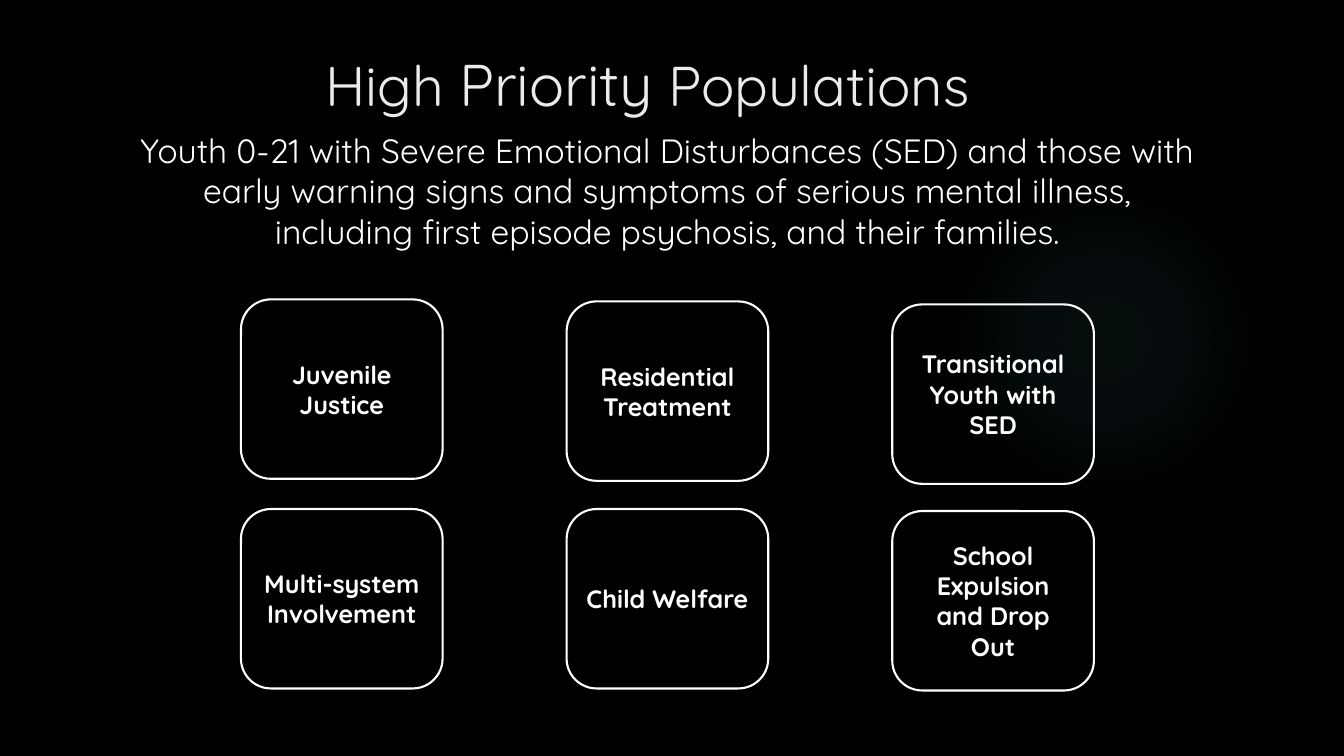
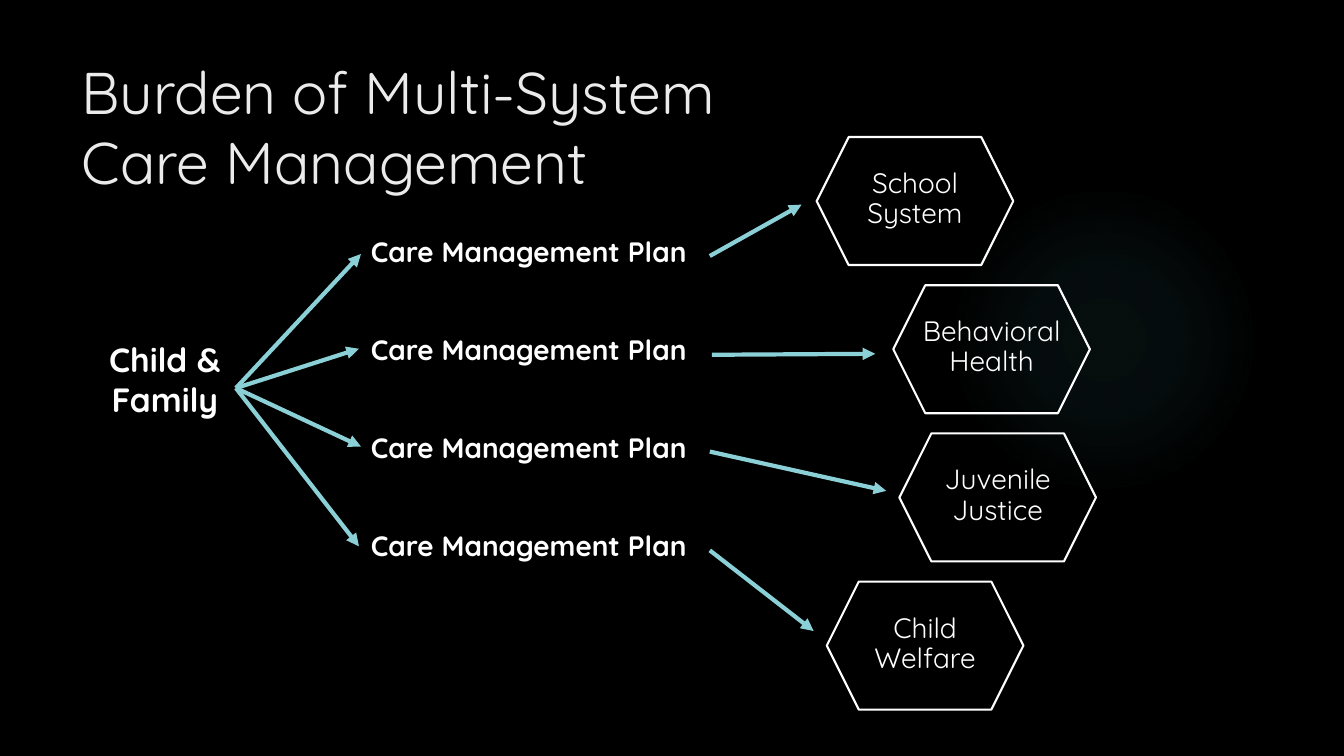
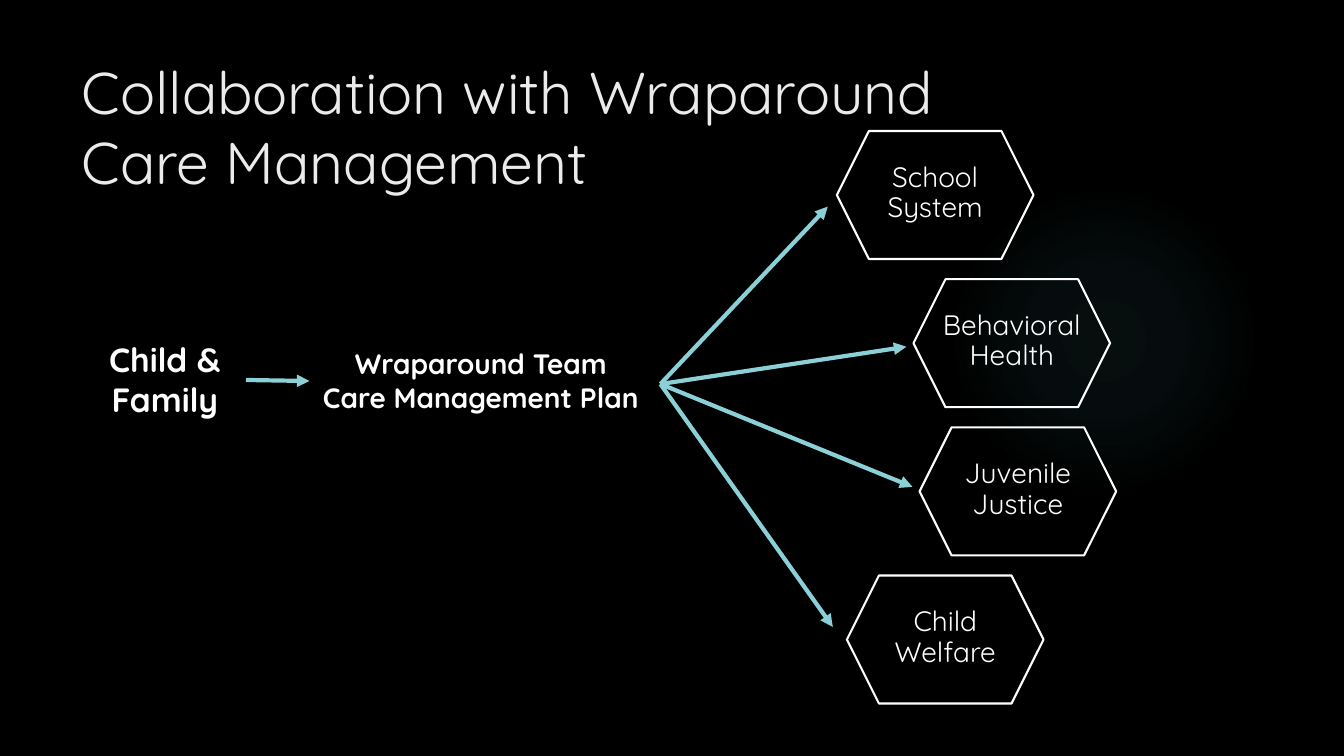
from pptx import Presentation
from pptx.dml.color import RGBColor
from pptx.enum.shapes import MSO_CONNECTOR as CONN, MSO_SHAPE as SHAPE
from pptx.enum.text import MSO_ANCHOR as ANCHOR, PP_ALIGN as ALIGN
from pptx.oxml import parse_xml
from pptx.oxml.ns import nsdecls
from pptx.util import Inches, Pt

FONT = "Quicksand"
BLACK, WHITE, TITLE = "000000", "FFFFFF", "EBEBEB"
ARROW, GLOW = "8AD0D6", "50B9C1"
HEX_W, HEX_H, HEX_STEP = 1.95, 1.27, 1.47
SYSTEMS = [
    ("School System", 0),
    ("Behavioral Health", 0.76),
    ("Juvenile Justice", 0.82),
    ("Child Welfare", 0.1),
]


def rgb(color):
    return RGBColor.from_string(color)


def inches(*values):
    return [Inches(v) for v in values]


def style(font, size, color=WHITE, bold=False):
    font.name, font.size, font.bold = FONT, Pt(size), bold
    font.color.rgb = rgb(color)


def write(tf, lines, size, bold=False, align=ALIGN.CENTER, spacing=None):
    tf.word_wrap = True
    for i, line in enumerate(lines):
        p = tf.add_paragraph() if i else tf.paragraphs[0]
        p.text, p.alignment, p.line_spacing = line, align, spacing
        style(p.font, size, bold=bold)


def text(s, box, *lines, size=20, bold=True, align=ALIGN.CENTER):
    tf = s.shapes.add_textbox(*inches(*box)).text_frame
    write(tf, lines, size, bold, align)


def outline(s, kind, box):
    sp = s.shapes.add_shape(kind, *inches(*box))
    sp.shadow.inherit = False
    sp.fill.background()
    sp.line.color.rgb = rgb(WHITE)
    sp.line.width = Pt(1.5)
    return sp


def arrow(s, start, end):
    c = s.shapes.add_connector(CONN.STRAIGHT, *inches(*start, *end))
    c.line.color.rgb = rgb(ARROW)
    c.line.width = Pt(3)
    spPr = c._element.spPr
    spPr.get_or_add_ln().append(parse_xml(f'<a:tailEnd {nsdecls("a")} type="triangle"/>'))
    spPr.append(parse_xml(f'<a:effectLst {nsdecls("a")}/>'))


def fan(s, start, ends):
    for end in ends:
        arrow(s, start, end)


def add_slide(prs, layout, box, runs, align=ALIGN.LEFT):
    s = prs.slides.add_slide(layout)
    sp = s.shapes.title
    sp.left, sp.top, sp.width, sp.height = inches(*box)
    tf = sp.text_frame
    tf.word_wrap, tf.vertical_anchor = True, ANCHOR.TOP
    p = tf.paragraphs[0]
    p.alignment = align
    for words, size in runs:
        for i, line in enumerate(words.split("\n")):
            if i:
                p.add_line_break()
            r = p.add_run()
            r.text = line
            style(r.font, size, TITLE)
    return s


def add_glow(s, layout):
    sp = s.shapes.add_shape(SHAPE.OVAL, *inches(9.41, 1.83, 3.08, 3.08))
    sp.shadow.inherit = False
    sp.line.fill.background()
    stops = "".join(
        f'<a:gs pos="{pos}000"><a:srgbClr val="{GLOW}"><a:alpha val="{alpha}000"/></a:srgbClr></a:gs>'
        for pos, alpha in [(0, 7), (36, 6), (69, 0)])
    el = sp._element
    el.spPr.find("{*}prstGeom").addnext(parse_xml(
        f'<a:gradFill {nsdecls("a")}><a:gsLst>{stops}</a:gsLst><a:path path="circle">'
        '<a:fillToRect l="50000" t="50000" r="50000" b="50000"/></a:path></a:gradFill>'))
    el.nvSpPr.cNvPr.set("id", "99")
    layout.shapes._spTree.insert(2, el)


def care_systems(s, left, top):
    for i, (name, dx) in enumerate(SYSTEMS):
        x, y = left + dx, top + i * HEX_STEP
        outline(s, SHAPE.HEXAGON, (x, y, HEX_W, HEX_H))
        tf = s.shapes.add_textbox(*inches(x + 0.23, y + 0.19, 1.49, 0.86)).text_frame
        tf.vertical_anchor = ANCHOR.MIDDLE
        tf.margin_left = tf.margin_right = tf.margin_top = tf.margin_bottom = Inches(0.03)
        write(tf, [name], 20, spacing=0.9)


def family(s):
    text(s, (0.93, 3.31, 1.41, 0.91), "Child & Family", size=24)


def populations(s, left, columns):
    for i, column in enumerate(columns):
        for name, top in column:
            sp = outline(s, SHAPE.ROUNDED_RECTANGLE, (left + i * 3.23, top, 2, 1.78))
            sp.text_frame.vertical_anchor = ANCHOR.MIDDLE
            write(sp.text_frame, [name], 18, bold=True)


def priority_slide(prs, layout):
    s = add_slide(prs, layout, (2.92, 0.42, 7, 0.75),
                  [("High ", 40), ("Priority", 42), (" Populations", 40)], ALIGN.CENTER)
    add_glow(s, layout)
    text(s, (1.29, 1.24, 10.65, 1.31),
         "Youth 0-21 with Severe Emotional Disturbances (SED) and those with early warning "
         "signs and symptoms of serious mental illness, including first episode psychosis, "
         "and their families.", size=24, bold=False)
    populations(s, 2.39, [
        [("Juvenile Justice", 2.97), ("Multi-system Involvement", 5.05)],
        [("Residential Treatment", 2.99), ("Child Welfare", 5.05)],
        [("Transitional Youth with SED", 3.02), ("School Expulsion and Drop Out", 5.07)],
    ])


def burden_slide(prs, layout):
    s = add_slide(prs, layout, (0.71, 0.5, 10.29, 0.72),
                  [("Burden of Multi-System\nCare Management", 42)])
    family(s)
    for i in range(4):
        text(s, (3.58, 2.28 + i * 0.97, 3.6, 0.44), "Care Management Plan", align=ALIGN.LEFT)
    fan(s, (2.34, 3.85), [(3.58, 2.52), (3.56, 3.46), (3.58, 4.43), (3.56, 5.42)])
    for start, end in [((7.04, 2.54), (7.95, 2.03)), ((7.06, 3.52), (8.68, 3.51)),
                       ((7.04, 4.48), (8.79, 4.87)), ((7.04, 5.46), (8.07, 6.26))]:
        arrow(s, start, end)
    care_systems(s, 8.1, 1.36)


def collaboration_slide(prs, layout):
    s = add_slide(prs, layout, (0.71, 0.5, 10.29, 0.72),
                  [("Collaboration with Wraparound\nCare Management", 42)])
    family(s)
    text(s, (2.97, 3.39, 3.6, 0.77), "Wraparound Team", "Care Management Plan")
    arrow(s, (2.44, 3.77), (3.07, 3.78))
    fan(s, (6.55, 3.81), [(8.21, 2.05), (8.99, 3.44), (9.05, 4.83), (8.26, 6.22)])
    care_systems(s, 8.3, 1.3)


def main():
    prs = Presentation()
    prs.slide_width, prs.slide_height = inches(13.33, 7.5)
    fill = prs.slide_master.background.fill
    fill.solid()
    fill.fore_color.rgb = rgb(BLACK)
    layout = prs.slide_layouts[5]
    for build in (priority_slide, burden_slide, collaboration_slide):
        build(prs, layout)
    prs.save("out.pptx")


if __name__ == "__main__":
    main()
